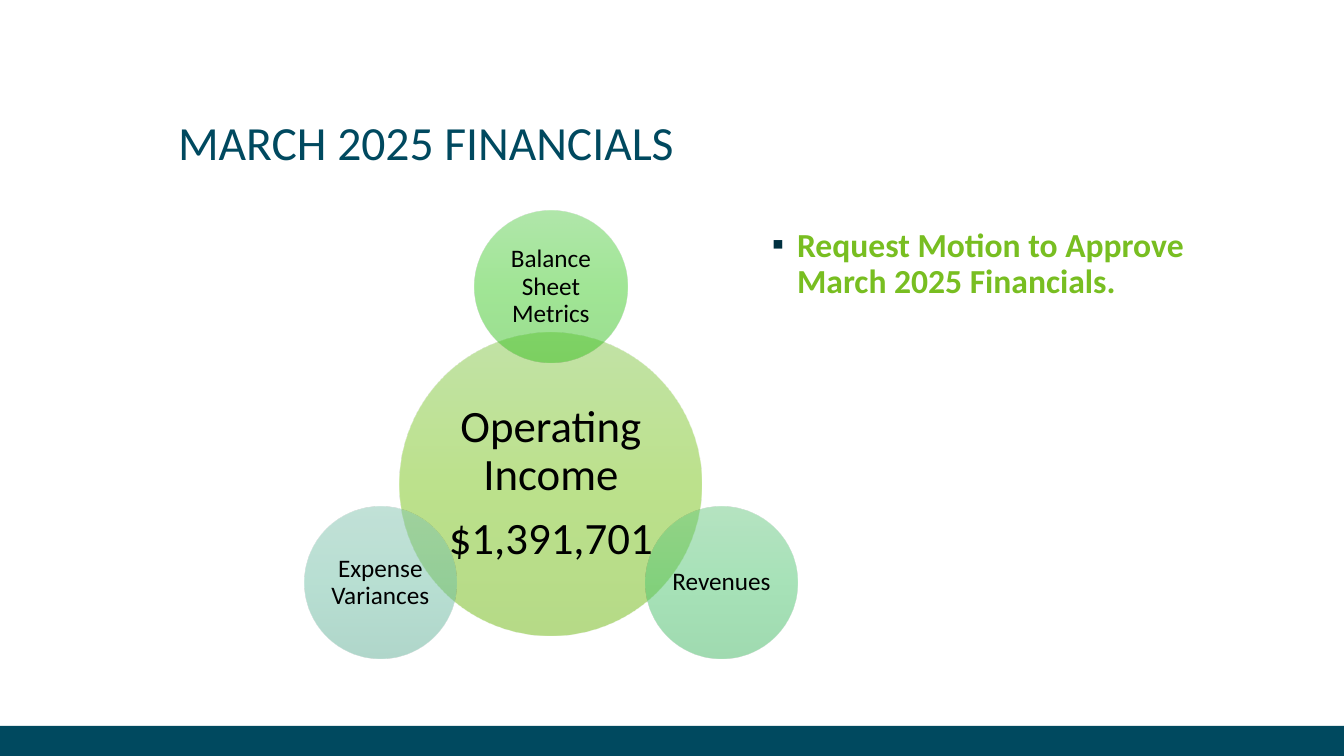
from math import cos, radians, sin

from lxml.etree import SubElement
from pptx import Presentation
from pptx.dml.color import RGBColor
from pptx.enum.shapes import MSO_SHAPE
from pptx.enum.text import MSO_ANCHOR, MSO_AUTO_SIZE, PP_ALIGN
from pptx.oxml.ns import qn
from pptx.util import Emu, Pt

TITLE = "MARCH 2025 FINANCIALS"
MOTION = "Request Motion to Approve March 2025 Financials."
HUB = {"lines": ["Operating Income", "$1,391,701"], "size": 32, "inset": 4,
       "colors": ["88C84F", "79C619", "6CB70F"]}
SATELLITES = [
    {"lines": ["Balance Sheet Metrics"], "colors": ["62D056", "43CE2C", "37BE21"]},
    {"lines": ["Revenues"], "colors": ["6CC984", "4FC771", "40B761"]},
    {"lines": ["Expense Variances"], "colors": ["86C5B1", "71C1A8", "61AF97"]},
]
NAVY, GREEN, BLACK, BULLET = "00495F", "78BE21", "000000", "003040"
FONT = "Calibri"

WIDTH, HEIGHT = 1344, 756
BAR_HEIGHT = 30
CENTER_X, CENTER_Y = 551, 484
HUB_DIAMETER, SATELLITE_DIAMETER, ORBIT = 302, 152, 197


def px(length):
    return Emu(round(length * 914400 / 100.8))


def color(value):
    return RGBColor.from_string(value)


def place(shape, left, top, width, height):
    box = {"left": left, "top": top, "width": width, "height": height}
    for name, length in box.items():
        setattr(shape, name, px(length))


def write(paragraph, text, size, font_color, align, bold=False):
    paragraph.text = text
    paragraph.alignment = align
    paragraph.line_spacing = 0.9
    paragraph.space_before = Pt(0)
    font = paragraph.font
    for name, value in {"name": FONT, "size": Pt(size), "bold": bold}.items():
        setattr(font, name, value)
    font.color.rgb = color(font_color)


def fill_gradient(shape, colors):
    """Fill top to bottom with evenly spaced, half transparent stops."""
    shape.fill.gradient()
    gradient = shape.fill._xPr.find(qn("a:gradFill"))
    for child in list(gradient):
        gradient.remove(child)
    stops = SubElement(gradient, qn("a:gsLst"))
    for index, value in enumerate(colors):
        position = 100000 * index // (len(colors) - 1)
        stop = SubElement(stops, qn("a:gs"), pos=str(position))
        rgb = SubElement(stop, qn("a:srgbClr"), val=value)
        SubElement(rgb, qn("a:alpha"), val="50000")
    SubElement(gradient, qn("a:lin"), ang="5400000", scaled="0")


def add_shape(slide, preset, left, top, width, height):
    shape = slide.shapes.add_shape(preset, *map(px, (left, top, width, height)))
    shape.shadow.inherit = False
    shape.line.fill.background()
    return shape


def add_circle(slide, center_x, center_y, diameter, lines, colors, size=18, inset=3):
    circle = add_shape(slide, MSO_SHAPE.OVAL, center_x - diameter / 2,
                       center_y - diameter / 2, diameter, diameter)
    fill_gradient(circle, colors)
    frame = circle.text_frame
    frame.word_wrap = True
    frame.vertical_anchor = MSO_ANCHOR.MIDDLE
    for side in ("left", "top", "right", "bottom"):
        setattr(frame, f"margin_{side}", px(inset))
    for index, line in enumerate(lines):
        paragraph = frame.add_paragraph() if index else frame.paragraphs[0]
        write(paragraph, line, size, BLACK, PP_ALIGN.CENTER)
        if index:
            paragraph.space_before = Pt(round(size * 0.35))


def add_bullet(paragraph):
    properties = paragraph._p.get_or_add_pPr()
    properties.set("marL", str(px(30)))
    properties.set("indent", str(-px(25)))
    bullet_color = SubElement(properties, qn("a:buClr"))
    SubElement(bullet_color, qn("a:srgbClr"), val=BULLET)
    SubElement(properties, qn("a:buFont"), typeface=FONT)
    SubElement(properties, qn("a:buChar"), char="▪")


def main():
    presentation = Presentation()
    presentation.slide_width, presentation.slide_height = px(WIDTH), px(HEIGHT)
    slide = presentation.slides.add_slide(presentation.slide_layouts[1])

    bar = add_shape(slide, MSO_SHAPE.RECTANGLE, 0, HEIGHT - BAR_HEIGHT, WIDTH, BAR_HEIGHT)
    bar.fill.solid()
    bar.fill.fore_color.rgb = color(NAVY)

    title, body = slide.shapes.title, slide.placeholders[1]
    place(title, 168, 50, 1008, 126)
    place(body, 757, 223, 496, 492)
    for shape, anchor in ((title, MSO_ANCHOR.BOTTOM), (body, MSO_ANCHOR.TOP)):
        shape.text_frame.vertical_anchor = anchor
        shape.text_frame.auto_size = MSO_AUTO_SIZE.NONE
    write(title.text_frame.paragraphs[0], TITLE, 34, NAVY, PP_ALIGN.LEFT)
    motion = body.text_frame.paragraphs[0]
    add_bullet(motion)
    write(motion, MOTION, 24, GREEN, PP_ALIGN.LEFT, bold=True)

    add_circle(slide, CENTER_X, CENTER_Y, HUB_DIAMETER, **HUB)
    for index, satellite in enumerate(SATELLITES):
        angle = radians(360 / len(SATELLITES) * index - 90)
        add_circle(slide, CENTER_X + ORBIT * cos(angle), CENTER_Y + ORBIT * sin(angle),
                   SATELLITE_DIAMETER, **satellite)

    presentation.save("out.pptx")


if __name__ == "__main__":
    main()
